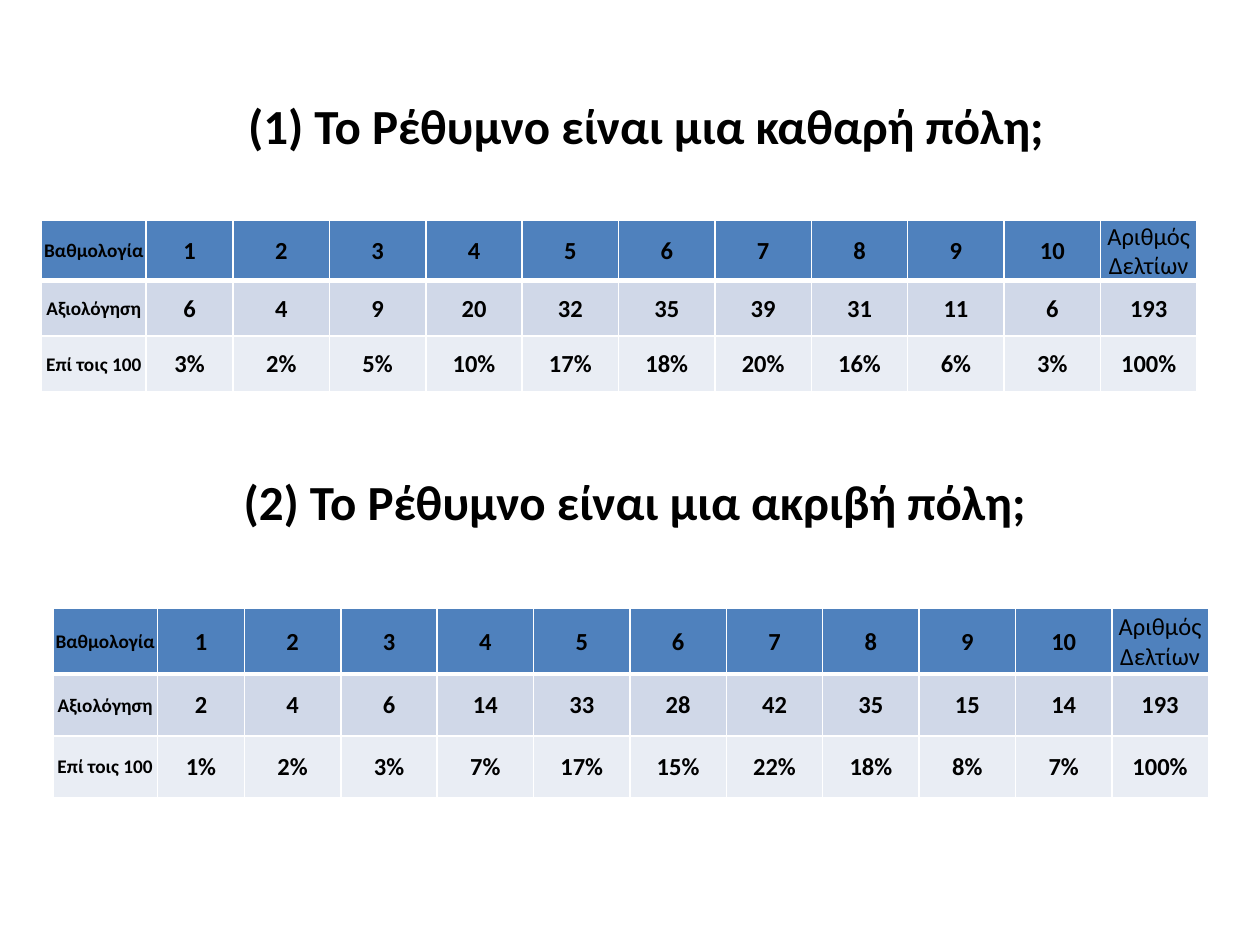
from lxml.etree import SubElement
from pptx import Presentation
from pptx.dml.color import RGBColor
from pptx.enum.text import MSO_ANCHOR, PP_ALIGN
from pptx.oxml.ns import qn
from pptx.util import Inches, Pt

FONT = "Calibri"
BLACK, WHITE = "000000", "FFFFFF"
ROW_FILLS = ["4F81BD", "D0D8E8", "E9EDF4"]
COLUMN_WIDTHS = [0.83, 0.69] + [0.765] * 10

# Number of ballots for each grade from 1 to 10
CLEAN_CITY_VOTES = [6, 4, 9, 20, 32, 35, 39, 31, 11, 6]
EXPENSIVE_CITY_VOTES = [2, 4, 6, 14, 33, 28, 42, 35, 15, 14]


def color(hex_string):
    return RGBColor.from_string(hex_string)


def format_paragraph(paragraph, size, bold=True):
    paragraph.alignment = PP_ALIGN.CENTER
    for run in paragraph.runs:
        run.font.name = FONT
        run.font.size = Pt(size)
        run.font.bold = bold
        run.font.color.rgb = color(BLACK)


def add_question(slide, text, left, top, width, height):
    text_box = slide.shapes.add_textbox(
        Inches(left), Inches(top), Inches(width), Inches(height))
    text_frame = text_box.text_frame
    text_frame.word_wrap = True
    text_frame.vertical_anchor = MSO_ANCHOR.MIDDLE
    text_frame.text = text
    format_paragraph(text_frame.paragraphs[0], 28)


def set_borders(cell, top_width, bottom_width):
    properties = cell._tc.get_or_add_tcPr()
    widths = {"a:lnL": 1, "a:lnR": 1, "a:lnT": top_width, "a:lnB": bottom_width}
    for tag, width in widths.items():
        line = SubElement(properties, qn(tag), w=str(Pt(width)))
        fill = SubElement(line, qn("a:solidFill"))
        SubElement(fill, qn("a:srgbClr"), val=WHITE)


def format_cell(cell, text, row, column):
    # The thick rule separates the header from the body
    set_borders(cell, 3 if row == 1 else 1, 3 if row == 0 else 1)
    cell.fill.solid()
    cell.fill.fore_color.rgb = color(ROW_FILLS[row])
    cell.margin_left = cell.margin_right = cell.margin_top = Inches(0.01)
    cell.margin_bottom = 0
    cell.vertical_anchor = MSO_ANCHOR.MIDDLE
    cell.text_frame.text = text
    is_total_heading = row == 0 and column == len(COLUMN_WIDTHS) - 1
    format_paragraph(cell.text_frame.paragraphs[0],
                     11 if column == 0 else 14, not is_total_heading)


def add_votes_table(slide, votes, left, top, width, row_heights):
    total = sum(votes)
    counts = votes + [total]
    rows = [
        ["Βαθμολογία "] + [str(grade) for grade in range(1, 11)] + ["Αριθμός Δελτίων"],
        ["Αξιολόγηση"] + [str(count) for count in counts],
        ["Επί τοις 100"] + [f"{count / total:.0%}" for count in counts],
    ]
    table = slide.shapes.add_table(
        len(rows), len(COLUMN_WIDTHS), Inches(left), Inches(top),
        Inches(width), Inches(sum(row_heights))).table
    table.horz_banding = False
    for table_column, share in zip(table.columns, COLUMN_WIDTHS):
        table_column.width = Inches(width * share / sum(COLUMN_WIDTHS))
    for row, texts in enumerate(rows):
        table.rows[row].height = Inches(row_heights[row])
        for column, text in enumerate(texts):
            format_cell(table.cell(row, column), text, row, column)


def main():
    presentation = Presentation()
    presentation.slide_width = Inches(10)
    presentation.slide_height = Inches(7.5)
    slide = presentation.slides.add_slide(presentation.slide_layouts[6])

    # First question
    add_question(slide, "(1) Το Ρέθυμνο είναι μια καθαρή πόλη; ", 0.67, 0.58, 9, 0.83)
    add_votes_table(slide, CLEAN_CITY_VOTES, 0.33, 1.75, 9.17, [0.44, 0.44, 0.44])

    # Second question
    add_question(slide, "(2) Το Ρέθυμνο είναι μια ακριβή πόλη; ", 0.58, 3.5, 9, 0.95)
    add_votes_table(slide, EXPENSIVE_CITY_VOTES, 0.42, 4.83, 9.17, [0.52, 0.49, 0.49])

    presentation.save("out.pptx")


if __name__ == "__main__":
    main()
